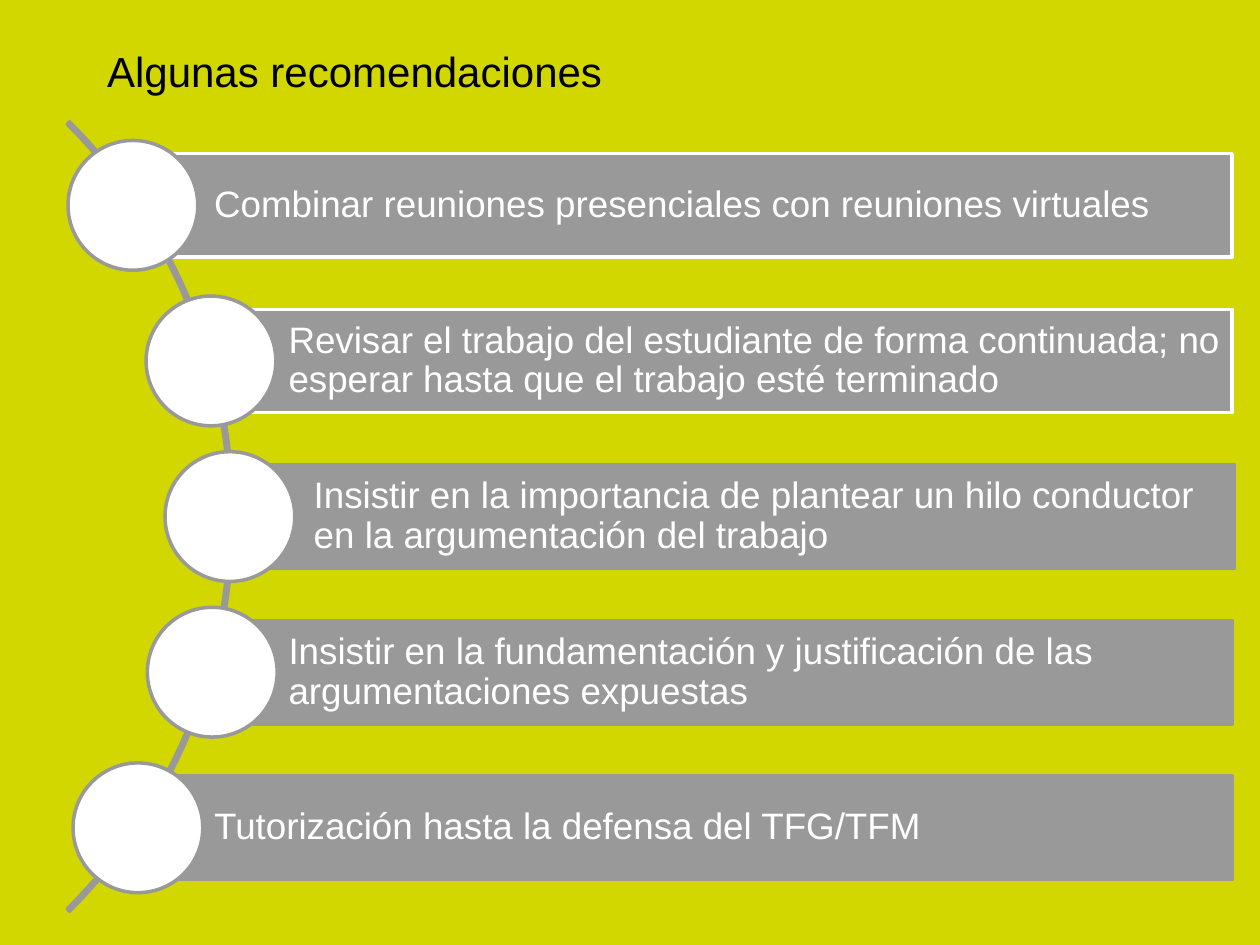
from dataclasses import dataclass

from pptx import Presentation
from pptx.dml.color import RGBColor
from pptx.enum import shapes, text
from pptx.util import Inches, Pt

LIME = RGBColor(0xD2, 0xD7, 0x00)
GRAY = RGBColor(0x99, 0x99, 0x99)
WHITE = RGBColor(0xFF, 0xFF, 0xFF)
BLACK = RGBColor(0x00, 0x00, 0x00)

WIDE, HIGH = 10, 7.5
TOP, PITCH = 1.22, 1.235  # first bar and step between rows
BAR, DISC = 0.82, 1.03    # bar height and disc diameter
KIND = shapes.MSO_SHAPE


@dataclass
class Step:
    words: str
    left: float
    right: float
    disc: float  # left edge of the disc
    edge: RGBColor


STEPS = [
    Step("Combinar reuniones presenciales con reuniones virtuales",
         1.05, 9.78, 0.54, WHITE),
    Step("Revisar el trabajo del estudiante de forma continuada; "
         "no esperar hasta que el trabajo esté terminado",
         1.64, 9.78, 1.16, WHITE),
    Step("Insistir en la importancia de plantear un hilo conductor "
         "en la argumentación del trabajo",
         1.84, 9.8, 1.31, GRAY),
    Step("Insistir en la fundamentación y justificación de las "
         "argumentaciones expuestas",
         1.64, 9.78, 1.17, GRAY),
    Step("Tutorización hasta la defensa del TFG/TFM",
         1.05, 9.78, 0.58, GRAY),
]


def style(font, size: int, color: RGBColor) -> None:
    font.name = "Arial"
    font.size = Pt(size)
    font.color.rgb = color


def draw(group, kind, box: tuple, fill, edge: RGBColor):
    item = group.shapes.add_shape(kind, *map(Inches, box))
    item.shadow.inherit = False
    if fill is None:
        item.fill.background()
    else:
        item.fill.solid()
        item.fill.fore_color.rgb = fill
    item.line.color.rgb = edge
    item.line.width = Pt(2)
    return item


def label(bar, words: str) -> None:
    frame = bar.text_frame
    frame.word_wrap = True
    frame.vertical_anchor = text.MSO_ANCHOR.MIDDLE
    frame.margin_left = Inches(0.65)
    frame.margin_right = frame.margin_top = frame.margin_bottom = Inches(0.06)
    para = frame.paragraphs[0]
    para.text = words
    para.alignment = text.PP_ALIGN.LEFT
    para.line_spacing = 0.9
    style(para.font, 21, WHITE)


def add_step(group, row: int, step: Step) -> None:
    top = TOP + row * PITCH
    bar = draw(group, KIND.RECTANGLE,
               (step.left, top, step.right - step.left, BAR), GRAY, step.edge)
    label(bar, step.words)
    draw(group, KIND.OVAL,
         (step.disc, top - (DISC - BAR) / 2, DISC, DISC), WHITE, GRAY)


def add_title(slide, words: str) -> None:
    title = slide.shapes.title
    title.left, title.top = Inches(0.75), Inches(0.31)
    title.width, title.height = Inches(8.06), Inches(0.5)
    frame = title.text_frame
    frame.word_wrap = True
    frame.auto_size = text.MSO_AUTO_SIZE.SHAPE_TO_FIT_TEXT
    frame.vertical_anchor = text.MSO_ANCHOR.TOP
    para = frame.paragraphs[0]
    para.text = words
    para.alignment = text.PP_ALIGN.LEFT
    style(para.font, 24, BLACK)


def main() -> None:
    deck = Presentation()
    deck.slide_width, deck.slide_height = Inches(WIDE), Inches(HIGH)
    slide = deck.slides.add_slide(deck.slide_layouts[5])

    # Background and title
    slide.background.fill.solid()
    slide.background.fill.fore_color.rgb = LIME
    add_title(slide, "Algunas recomendaciones")

    # Arc behind the steps
    group = slide.shapes.add_group_shape()
    arc = draw(group, KIND.BLOCK_ARC, (-7.01, -0.33, 8.86, 8.86), None, GRAY)
    for i, turn in enumerate((189, 27, 0.003)):
        arc.adjustments[i] = turn

    # Bars with their discs
    for row, step in enumerate(STEPS):
        add_step(group, row, step)

    deck.save("out.pptx")


if __name__ == "__main__":
    main()
